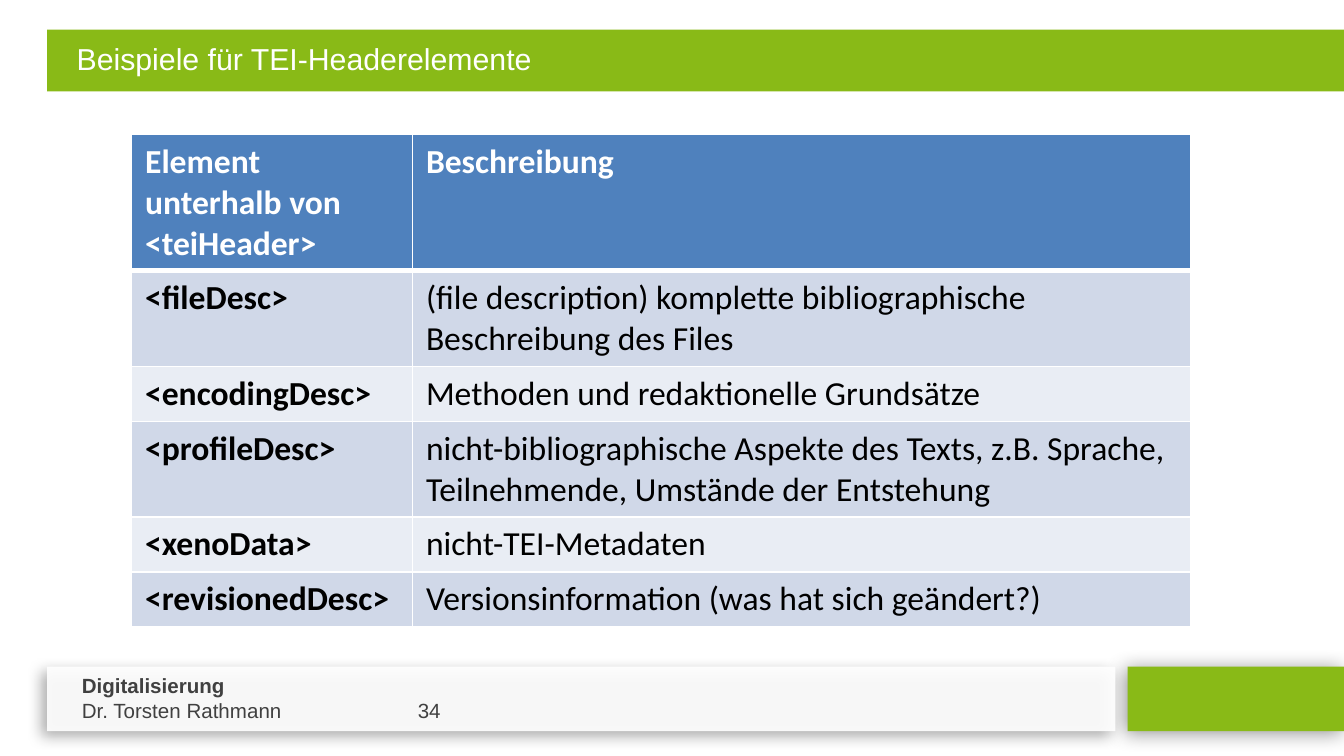
from dataclasses import dataclass
from typing import Optional

from lxml.etree import SubElement
from pptx import Presentation
from pptx.dml.color import RGBColor
from pptx.enum.shapes import MSO_SHAPE as Preset
from pptx.enum.text import MSO_ANCHOR as Anchor, MSO_AUTO_SIZE as AutoSize, PP_ALIGN as Align
from pptx.oxml.ns import qn
from pptx.util import Inches, Pt

SLIDE_WIDTH = Inches(10)
SLIDE_HEIGHT = SLIDE_WIDTH * 9 // 16
GREEN, WHITE, GREY, BLACK = "89BA17", "FFFFFF", "404040", "000000"
HEADER_BLUE, BANDS = "4F81BD", ("D0D8E8", "E9EDF4")
COLUMN_WIDTHS = (2.09, 5.79)
ROW_HEIGHT = 0.41
ROWS = (
    ("Element unterhalb von <teiHeader>", "Beschreibung"),
    ("<fileDesc>", "(file description) komplette bibliographische Beschreibung des Files"),
    ("<encodingDesc>", "Methoden und redaktionelle Grundsätze"),
    ("<profileDesc>", "nicht-bibliographische Aspekte des Texts, z.B. Sprache, "
                      "Teilnehmende, Umstände der Entstehung"),
    ("<xenoData>", "nicht-TEI-Metadaten"),
    ("<revisionedDesc>", "Versionsinformation (was hat sich geändert?)"),
)


@dataclass(frozen=True)
class Shadow:
    alpha: int
    blur: float
    distance: float
    direction: int


@dataclass(frozen=True)
class Bar:
    left: float
    top: float
    width: float
    height: float
    fill: str
    opacity: int = 100
    shadow: Optional[Shadow] = None


BARS = (
    Bar(8.39, 4.96, 1.61, 0.48, GREEN, shadow=Shadow(42, 10.8, 2, 142)),
    Bar(0.35, 4.96, 7.95, 0.48, WHITE, 91, Shadow(34, 7.5, 4, 145)),
    Bar(0.35, 0.22, 9.69, 0.46, GREEN),
)


def color(value: str) -> RGBColor:
    return RGBColor.from_string(value)


def set_attributes(target, values: dict) -> None:
    for name, value in values.items():
        setattr(target, name, value)


def format_font(font, name: str, size: float, fill: str, bold: bool = False) -> None:
    set_attributes(font, {"name": name, "size": Pt(size), "bold": bold})
    font.color.rgb = color(fill)


def add_alpha(color_element, percent: int) -> None:
    SubElement(color_element, qn("a:alpha"), val=str(percent * 1000))


def draw_bar(slide, bar: Bar) -> None:
    box = map(Inches, (bar.left, bar.top, bar.width, bar.height))
    shape = slide.shapes.add_shape(Preset.RECTANGLE, *box)
    shape.shadow.inherit = False
    shape.line.fill.background()
    shape.fill.solid()
    shape.fill.fore_color.rgb = color(bar.fill)
    properties = shape.element.spPr
    if bar.opacity < 100:
        add_alpha(properties.find(f"{qn('a:solidFill')}/{qn('a:srgbClr')}"), bar.opacity)
    if bar.shadow:
        outer = SubElement(
            properties.find(qn("a:effectLst")), qn("a:outerShdw"),
            blurRad=str(Pt(bar.shadow.blur)), dist=str(Pt(bar.shadow.distance)),
            dir=str(bar.shadow.direction * 60000), rotWithShape="0")
        add_alpha(SubElement(outer, qn("a:srgbClr"), val=BLACK), bar.shadow.alpha)


def draw_title(slide, text: str) -> None:
    title = slide.shapes.title
    title.element.getparent().append(title.element)
    set_attributes(title, {"left": Inches(0.35), "top": Inches(0.22),
                           "width": Inches(9.69), "height": Inches(0.35)})
    frame = title.text_frame
    set_attributes(frame, {
        "text": text, "word_wrap": True, "auto_size": AutoSize.NONE,
        "vertical_anchor": Anchor.TOP, "margin_left": Inches(0.22),
        "margin_top": Inches(0.08), "margin_right": Inches(0.1),
        "margin_bottom": Inches(0.05)})
    paragraph = frame.paragraphs[0]
    paragraph.alignment = Align.LEFT
    format_font(paragraph.runs[0].font, "Arial", 16.2, WHITE)


def draw_footer(slide, heading: str, author: str, number: str) -> None:
    box = slide.shapes.add_textbox(Inches(0.51), Inches(4.96), Inches(5.98), Inches(0.47))
    frame = box.text_frame
    set_attributes(frame, {"word_wrap": True, "auto_size": AutoSize.SHAPE_TO_FIT_TEXT})
    author_paragraph = frame.add_paragraph()
    tabs = SubElement(author_paragraph._p.get_or_add_pPr(), qn("a:tabLst"))
    SubElement(tabs, qn("a:tab"), pos=str(Inches(2.5)), algn="l")
    lines = ((frame.paragraphs[0], heading, True),
             (author_paragraph, f"{author}\t{number}", False))
    for paragraph, text, bold in lines:
        run = paragraph.add_run()
        run.text = text
        format_font(run.font, "Arial", 11, GREY, bold)


def set_borders(cell, bottom_width: float) -> None:
    properties = cell._tc.get_or_add_tcPr()
    widths = {"a:lnL": 1, "a:lnR": 1, "a:lnT": 1, "a:lnB": bottom_width}
    for index, (tag, width) in enumerate(widths.items()):
        line = SubElement(properties, qn(tag), w=str(Pt(width)))
        SubElement(SubElement(line, qn("a:solidFill")), qn("a:srgbClr"), val=WHITE)
        properties.insert(index, line)


def draw_table(slide) -> None:
    table = slide.shapes.add_table(
        len(ROWS), len(COLUMN_WIDTHS), Inches(0.98), Inches(1),
        Inches(sum(COLUMN_WIDTHS)), Inches(ROW_HEIGHT * len(ROWS))).table
    for column, width in zip(table.columns, COLUMN_WIDTHS):
        column.width = Inches(width)
    for row_index, texts in enumerate(ROWS):
        is_header = row_index == 0
        fill = HEADER_BLUE if is_header else BANDS[(row_index - 1) % 2]
        for column_index, text in enumerate(texts):
            cell = table.cell(row_index, column_index)
            cell.text = text
            cell.fill.solid()
            cell.fill.fore_color.rgb = color(fill)
            set_borders(cell, 3 if is_header else 1)
            format_font(cell.text_frame.paragraphs[0].runs[0].font, "Calibri", 18,
                        WHITE if is_header else BLACK, is_header or column_index == 0)


def main() -> None:
    presentation = Presentation()
    set_attributes(presentation, {"slide_width": SLIDE_WIDTH, "slide_height": SLIDE_HEIGHT})
    slide = presentation.slides.add_slide(presentation.slide_layouts[5])
    for bar in BARS:
        draw_bar(slide, bar)
    draw_footer(slide, "Digitalisierung", "Dr. Torsten Rathmann", "34")
    draw_title(slide, "Beispiele für TEI-Headerelemente")
    draw_table(slide)
    presentation.save("out.pptx")


if __name__ == "__main__":
    main()
